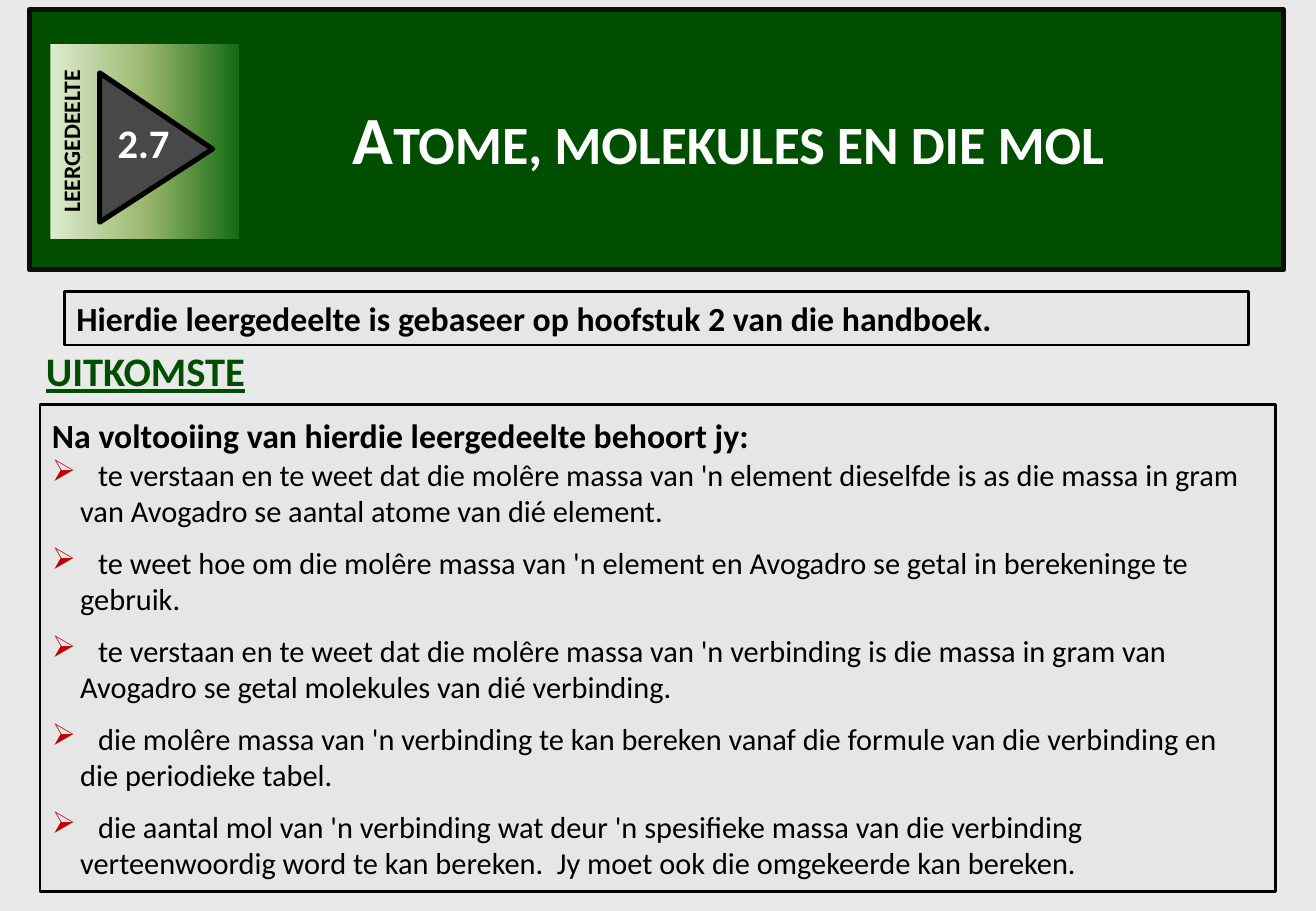
from dataclasses import dataclass
from typing import Any, Optional

import pptx
import pptx.dml.color
import pptx.enum.shapes
import pptx.enum.text
import pptx.oxml
import pptx.oxml.ns
import pptx.util
import copy

Pt = pptx.util.Pt
RGBColor = pptx.dml.color.RGBColor
SHAPE = pptx.enum.shapes.MSO_SHAPE
ALIGN = pptx.enum.text.PP_ALIGN
ANCHOR = pptx.enum.text.MSO_ANCHOR
qn = pptx.oxml.ns.qn

FONT = "Calibri"
WHITE = RGBColor(0xFF, 0xFF, 0xFF)
BLACK = RGBColor(0, 0, 0)
BORDER = RGBColor(0x0D, 0x0D, 0x0D)
GREEN = RGBColor(0, 0x4E, 0)
GREY = RGBColor(0x48, 0x48, 0x48)
PANEL = RGBColor(0xE6, 0xE6, 0xE6)
PAGE = RGBColor(0xE9, 0xE9, 0xE9)
RED = RGBColor(0xC0, 0, 0)
FADE = [(0, RGBColor(0xDD, 0xEB, 0xCF)), (0.5, RGBColor(0x9C, 0xB8, 0x6E)),
        (1, RGBColor(0x15, 0x6B, 0x13))]

OUTCOMES = [
    ("te verstaan en te weet dat die molêre massa van 'n element dieselfde is as die massa in gram",
     "van Avogadro se aantal atome van dié element."),
    ("te weet hoe om die molêre massa van 'n element en Avogadro se getal in berekeninge te",
     "gebruik."),
    ("te verstaan en te weet dat die molêre massa van 'n verbinding is die massa in gram van",
     "Avogadro se getal molekules van dié verbinding."),
    ("die molêre massa van 'n verbinding te kan bereken vanaf die formule van die verbinding en",
     "die periodieke tabel."),
    ("die aantal mol van 'n verbinding wat deur 'n spesifieke massa van die verbinding",
     "verteenwoordig word te kan bereken.  Jy moet ook die omgekeerde kan bereken."),
]


@dataclass
class Box:
    left: float
    top: float
    width: float
    height: float
    fill: Optional[RGBColor] = None
    line: Optional[RGBColor] = None
    weight: float = 1.5
    kind: Any = SHAPE.RECTANGLE
    rotation: float = 0


@dataclass
class Label:
    text: str
    size: float
    color: RGBColor = BLACK
    align: Any = ALIGN.LEFT
    anchor: Any = ANCHOR.TOP
    wrap: bool = True
    underline: bool = False
    small_caps: bool = False


def add_box(s: Any, box: Box) -> Any:
    sp = s.shapes.add_shape(box.kind, Pt(box.left), Pt(box.top), Pt(box.width), Pt(box.height))
    sp.shadow.inherit = False
    sp.rotation = box.rotation
    if box.fill is None:
        sp.fill.background()
    else:
        sp.fill.solid()
        sp.fill.fore_color.rgb = box.fill
    if box.line is None:
        sp.line.fill.background()
    else:
        sp.line.color.rgb = box.line
        sp.line.width = Pt(box.weight)
    return sp


def add_run(p: Any, text: str, size: float, color: RGBColor = BLACK, bold: bool = True) -> Any:
    r = p.add_run()
    r.text = text
    r.font.name = FONT
    r.font.size = Pt(size)
    r.font.bold = bold
    r.font.color.rgb = color
    return r


def write(sp: Any, label: Label) -> None:
    tf = sp.text_frame
    tf.word_wrap = label.wrap
    tf.vertical_anchor = label.anchor
    p = tf.paragraphs[0]
    p.alignment = label.align
    r = add_run(p, label.text, label.size, label.color)
    if label.underline:
        r.font.underline = True
    if label.small_caps:
        r.font._element.set("cap", "small")


def add_text(s: Any, box: Box, label: Label) -> None:
    write(s.shapes.add_textbox(Pt(box.left), Pt(box.top), Pt(box.width), Pt(box.height)), label)


def fade(sp: Any) -> None:
    sp.fill.gradient()
    sp.fill.gradient_angle = 270
    stops = sp._element.spPr.find(".//" + qn("a:gsLst"))
    stops.append(copy.deepcopy(stops[0]))
    for stop, (position, color) in zip(sp.fill.gradient_stops, FADE):
        stop.position = position
        stop.color.rgb = color


def add_outcome(tf: Any, lines: tuple[str, str], gap: float) -> None:
    p = tf.add_paragraph()
    p.alignment = ALIGN.LEFT
    p.space_before = Pt(gap)
    pPr = p._p.get_or_add_pPr()
    pPr.set("marL", str(Pt(16.75)))
    pPr.set("indent", str(-Pt(16.75)))
    ns = pptx.oxml.ns.nsdecls("a")
    for xml in (f'<a:buClr {ns}><a:srgbClr val="{RED}"/></a:buClr>',
                f'<a:buChar {ns} char="➢"/>',
                f'<a:tabLst {ns}><a:tab pos="{Pt(27.36)}" algn="l"/></a:tabLst>'):
        pPr.append(pptx.oxml.parse_xml(xml))
    add_run(p, "\t" + lines[0], 18, bold=False)
    p.add_line_break()
    add_run(p, lines[1], 18, bold=False)


def main() -> None:
    prs = pptx.Presentation()
    prs.slide_width, prs.slide_height = Pt(780), Pt(540)
    s = prs.slides.add_slide(prs.slide_layouts[6])
    s.background.fill.solid()
    s.background.fill.fore_color.rgb = PAGE

    add_box(s, Box(17.28, 5.76, 743.76, 154.08, GREEN, BORDER, 3))
    add_text(s, Box(167.76, 54, 527.76, 55.44),
             Label("Atome, molekules en die mol", 40, WHITE, ALIGN.CENTER, small_caps=True))

    badge = add_box(s, Box(28.08, 28.08, 115.2, 111.6, rotation=270))
    fade(badge)
    write(badge, Label("LEERGEDEELTE", 14, align=ALIGN.CENTER))
    arrow = add_box(s, Box(48.24, 54, 88.56, 66.96, GREY, BLACK, 3,
                           SHAPE.ISOSCELES_TRIANGLE, 90))
    arrow.adjustments[0] = 0.51
    add_text(s, Box(62.64, 66.24, 45.36, 36.72), Label("2.7", 24, WHITE, wrap=False))

    add_text(s, Box(20.16, 201.6, 208.08, 36), Label("UITKOMSTE", 24, GREEN, underline=True))

    panel = add_box(s, Box(23.76, 239.76, 732.24, 288.72, PANEL, BLACK))
    write(panel, Label("Na voltooiing van hierdie leergedeelte behoort jy:", 20,
                       anchor=ANCHOR.MIDDLE))
    for i, lines in enumerate(OUTCOMES):
        add_outcome(panel.text_frame, lines, 9 if i else 0)

    source = add_box(s, Box(38.16, 172.8, 702, 31.68, PANEL, BLACK))
    write(source, Label("Hierdie leergedeelte is gebaseer op hoofstuk 2 van die handboek.", 20,
                        anchor=ANCHOR.MIDDLE))
    prs.save("out.pptx")


if __name__ == "__main__":
    main()
